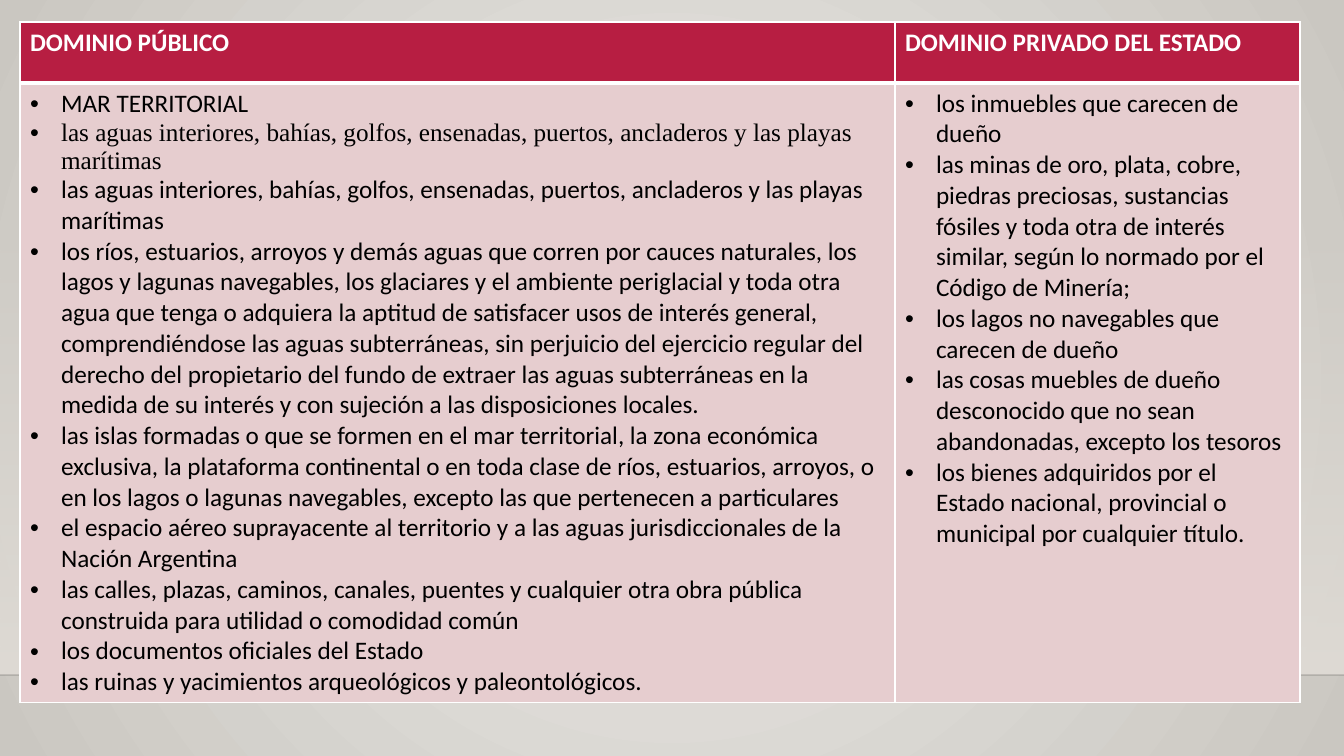
from lxml.etree import SubElement as Sub
from pptx import Presentation
from pptx.dml.color import RGBColor
from pptx.enum.shapes import MSO_CONNECTOR as Conn, MSO_SHAPE as Shape
from pptx.oxml import parse_xml
from pptx.oxml.ns import nsdecls, qn
from pptx.util import Emu, Pt

HEADS = ["DOMINIO PÚBLICO", "DOMINIO PRIVADO DEL ESTADO"]
WATERS = "las aguas interiores, bahías, golfos, ensenadas, puertos, ancladeros y las playas marítimas"
LISTS = [
    [
        "MAR TERRITORIAL",
        WATERS,
        WATERS,
        "los ríos, estuarios, arroyos y demás aguas que corren por cauces naturales, los lagos y "
        "lagunas navegables, los glaciares y el ambiente periglacial y toda otra agua que tenga o "
        "adquiera la aptitud de satisfacer usos de interés general, comprendiéndose las aguas "
        "subterráneas, sin perjuicio del ejercicio regular del derecho del propietario del fundo de "
        "extraer las aguas subterráneas en la medida de su interés y con sujeción a las "
        "disposiciones locales.",
        "las islas formadas o que se formen en el mar territorial, la zona económica exclusiva, la "
        "plataforma continental o en toda clase de ríos, estuarios, arroyos, o en los lagos o "
        "lagunas navegables, excepto las que pertenecen a particulares",
        "el espacio aéreo suprayacente al territorio y a las aguas jurisdiccionales de la Nación Argentina",
        "las calles, plazas, caminos, canales, puentes y cualquier otra obra pública construida "
        "para utilidad o comodidad común",
        "los documentos oficiales del Estado",
        "las ruinas y yacimientos arqueológicos y paleontológicos.",
    ],
    [
        "los inmuebles que carecen de dueño",
        "las minas de oro, plata, cobre, piedras preciosas, sustancias fósiles y toda otra de "
        "interés similar, según lo normado por el Código de Minería;",
        "los lagos no navegables que carecen de dueño",
        "las cosas muebles de dueño desconocido que no sean abandonadas, excepto los tesoros",
        "los bienes adquiridos por el Estado nacional, provincial o municipal por cualquier título.",
    ],
]
SERIF = (0, 1)
WIDE, HIGH = 1344, 756
LEFT, TOP = 20, 22
COLS, ROWS = [875, 405], [61, 619]
WALL, FLOOR = 223, 675
INDENT = 31

WHITE = RGBColor(0xFF, 0xFF, 0xFF)
BLACK = RGBColor(0, 0, 0)
RED = RGBColor(0xB7, 0x1E, 0x42)
PINK = RGBColor(0xE6, 0xCD, 0xCF)
LIGHT = RGBColor(0xEC, 0xEA, 0xE7)
DARK = RGBColor(0xCA, 0xC7, 0xC1)
SAND = RGBColor(0xDF, 0xDB, 0xD5)


def px(n):
    return Emu(round(n * 914400 / 100.8))


def blend(fill, *tones):
    fill.gradient()
    for stop, tone in zip(fill.gradient_stops, tones):
        stop.color.rgb = tone


def fade(part, share):
    tone = next(part.iter(qn("a:srgbClr")))
    Sub(tone, qn("a:alpha"), val=str(share * 1000))


def edge(cell, sides):
    props = cell._tc.get_or_add_tcPr()
    for spot, (side, width) in enumerate(sides.items()):
        props.insert(spot, parse_xml(
            f'<a:ln{side} {nsdecls("a")} w="{Pt(width)}"><a:solidFill>'
            f'<a:srgbClr val="{WHITE}"/></a:solidFill></a:ln{side}>'))


def style(para, face, tone, bold):
    for run in para.runs:
        font = run.font
        font.name, font.size, font.bold = face, Pt(18), bold
        font.color.rgb = tone


def bullet(para):
    props = para._p.get_or_add_pPr()
    props.set("marL", str(px(INDENT)))
    props.set("indent", str(-px(INDENT)))
    Sub(props, qn("a:buFont"), typeface="Arial")
    Sub(props, qn("a:buChar"), char="•")


def scene(slide):
    back = slide.background.fill
    blend(back, LIGHT, DARK)
    grad = next(slide.element.iter(qn("a:gradFill")))
    grad.replace(grad.find(qn("a:lin")), parse_xml(
        f'<a:path {nsdecls("a")} path="circle">'
        '<a:fillToRect l="50000" t="50000" r="50000" b="50000"/></a:path>'))

    wall = slide.shapes.add_shape(Shape.RECTANGLE, 0, px(WALL), px(WIDE), px(FLOOR - WALL))
    wall.shadow.inherit = False
    wall.line.fill.background()
    blend(wall.fill, SAND, SAND)
    wall.fill.gradient_angle = 270
    fade(wall._element.spPr, 0)

    line = slide.shapes.add_connector(Conn.STRAIGHT, 0, px(FLOOR), px(WIDE), px(FLOOR))
    line.line.color.rgb = BLACK
    line.line.width = Pt(1)
    fade(line._element.spPr, 20)
    Sub(line._element.spPr, qn("a:effectLst"))


def grid(slide):
    table = slide.shapes.add_table(
        2, 2, px(LEFT), px(TOP), px(sum(COLS)), px(sum(ROWS))).table
    for row, high in zip(table.rows, ROWS):
        row.height = px(high)
    for c, (wide, head, items) in enumerate(zip(COLS, HEADS, LISTS)):
        table.columns[c].width = px(wide)
        top, body = table.cell(0, c), table.cell(1, c)
        for cell, tone in ((top, RED), (body, PINK)):
            cell.fill.solid()
            cell.fill.fore_color.rgb = tone
        edge(top, {"L": 1, "R": 1, "T": 1, "B": 3})
        edge(body, {"L": 1, "R": 1, "T": 3, "B": 1})
        top.text_frame.text = head
        style(top.text_frame.paragraphs[0], "Calibri", WHITE, True)
        body.text_frame.text = "\n".join(items)
        for i, para in enumerate(body.text_frame.paragraphs):
            bullet(para)
            face = "Times New Roman" if (c, i) == SERIF else "Calibri"
            style(para, face, BLACK, False)


def main():
    deck = Presentation()
    deck.slide_width, deck.slide_height = px(WIDE), px(HIGH)
    slide = deck.slides.add_slide(deck.slide_layouts[6])
    scene(slide)
    grid(slide)
    deck.save("out.pptx")


if __name__ == "__main__":
    main()
